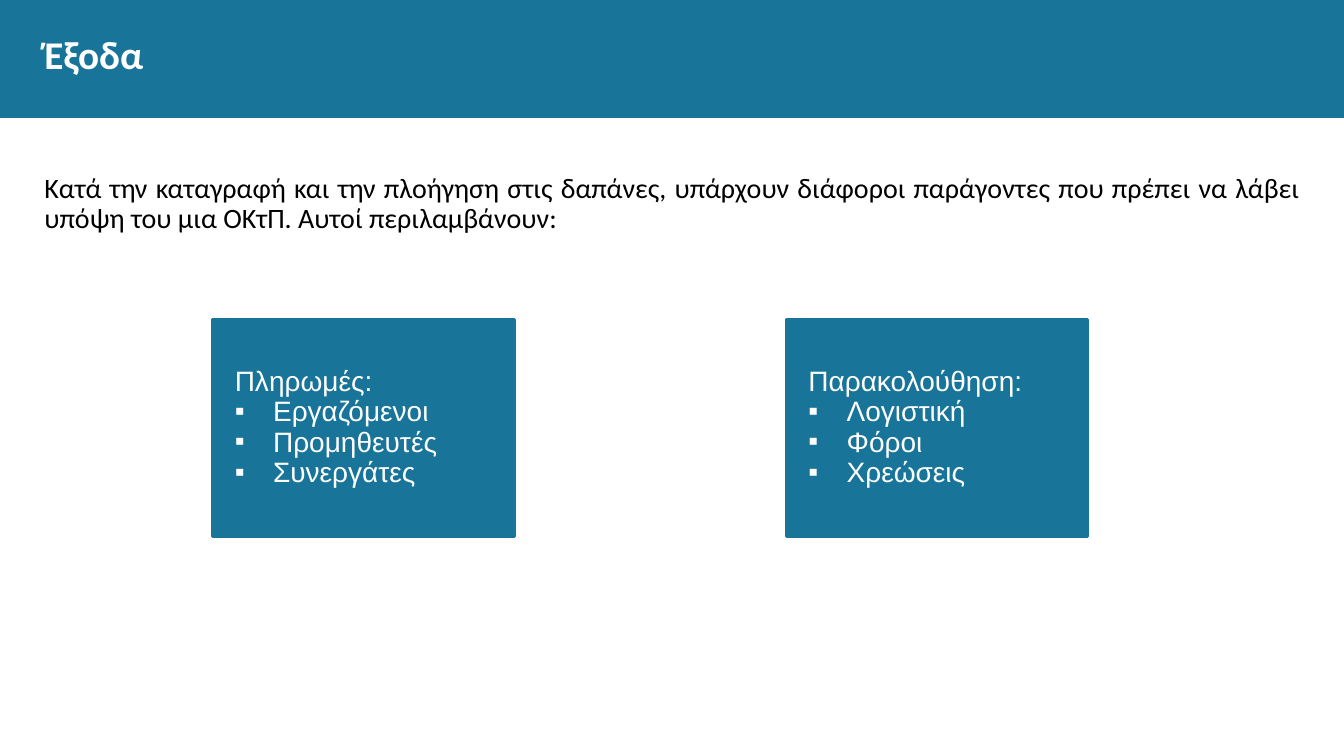
from lxml.etree import SubElement
from pptx import Presentation
from pptx.dml.color import RGBColor
from pptx.enum.shapes import MSO_SHAPE
from pptx.enum.text import MSO_ANCHOR, MSO_AUTO_SIZE, PP_ALIGN
from pptx.oxml.ns import qn
from pptx.util import Inches, Pt

BLUE, WHITE, BLACK = "187498", "FFFFFF", "000000"
MARGIN, CONTENT_WIDTH = 3.3, 93.47
CARD_LEFT, CARD_STEP = 15.83, 42.68
CARDS = [
    ("Πληρωμές:", ["Εργαζόμενοι", "Προμηθευτές", "Συνεργάτες"]),
    ("Παρακολούθηση:", ["Λογιστική", "Φόροι", "Χρεώσεις"]),
]


def color(value):
    return RGBColor.from_string(value)


class SlideBuilder:
    """Draws on one slide; every box is left, top, width, height in percent of the slide."""

    def __init__(self, presentation):
        self.width = presentation.slide_width
        self.height = presentation.slide_height
        self.slide = presentation.slides.add_slide(presentation.slide_layouts[5])

    def place(self, box):
        sides = (self.width, self.height, self.width, self.height)
        return [round(side * share / 100) for side, share in zip(sides, box)]

    def style(self, paragraph, size, font_name, font_color, align, bold=False):
        paragraph.alignment = align
        paragraph.line_spacing = 0.9
        font = paragraph.font
        font.size, font.name, font.bold = Pt(size), font_name, bold
        font.color.rgb = color(font_color)

    def frame(self, shape, anchor, inset=None):
        frame = shape.text_frame
        frame.word_wrap = True
        frame.auto_size = MSO_AUTO_SIZE.NONE
        frame.vertical_anchor = anchor
        if inset is not None:
            frame.margin_left = frame.margin_right = inset
            frame.margin_top = frame.margin_bottom = inset
        return frame

    def rectangle(self, box):
        shape = self.slide.shapes.add_shape(MSO_SHAPE.RECTANGLE, *self.place(box))
        shape.shadow.inherit = False
        shape.fill.solid()
        shape.fill.fore_color.rgb = color(BLUE)
        return shape

    def title(self, text, box):
        title = self.slide.shapes.title
        title.left, title.top, title.width, title.height = self.place(box)
        frame = self.frame(title, MSO_ANCHOR.MIDDLE, 0)
        frame.text = text
        self.style(frame.paragraphs[0], 28, "Calibri", WHITE, PP_ALIGN.LEFT, True)

    def title_band(self, box):
        """Adds the band behind the title."""
        band = self.rectangle(box)
        band.line.fill.background()
        self.slide.shapes.title.element.addprevious(band.element)

    def body(self, text, box):
        text_box = self.slide.shapes.add_textbox(*self.place(box))
        frame = self.frame(text_box, MSO_ANCHOR.TOP, 0)
        frame.text = text
        self.style(frame.paragraphs[0], 20, "Calibri", BLACK, PP_ALIGN.JUSTIFY)

    def indent(self, paragraph, left, first_line=0):
        properties = paragraph._p.get_or_add_pPr()
        properties.set("marL", str(Inches(left)))
        properties.set("indent", str(Inches(first_line)))
        return properties

    def bullet(self, paragraph):
        properties = self.indent(paragraph, 0.5, -0.38)
        bullet_color = SubElement(properties, qn("a:buClr"))
        SubElement(bullet_color, qn("a:srgbClr"), val=WHITE)
        SubElement(properties, qn("a:buFont"), typeface="Arial")
        SubElement(properties, qn("a:buChar"), char="▪")
        # The schema wants the default run properties after the bullet.
        properties.append(properties.find(qn("a:defRPr")))

    def card(self, heading, items, box):
        shape = self.rectangle(box)
        shape.line.color.rgb = color(BLUE)
        shape.line.width = Pt(2)
        frame = self.frame(shape, MSO_ANCHOR.MIDDLE)
        frame.text = "\n".join([heading, *items])
        for paragraph in frame.paragraphs:
            self.style(paragraph, 20, "Arial", WHITE, PP_ALIGN.JUSTIFY)
        heading_paragraph, *item_paragraphs = frame.paragraphs
        self.indent(heading_paragraph, 0.12)
        for paragraph in item_paragraphs:
            self.bullet(paragraph)


def main():
    presentation = Presentation()
    presentation.slide_width = Inches(13.33)
    presentation.slide_height = Inches(7.5)
    builder = SlideBuilder(presentation)
    builder.title_band((0, 0, 100, 15.6))
    builder.title("Έξοδα", (MARGIN, 2.53, CONTENT_WIDTH, 9.87))
    builder.body(
        "Κατά την καταγραφή και την πλοήγηση στις δαπάνες, υπάρχουν διάφοροι "
        "παράγοντες που πρέπει να λάβει υπόψη του μια ΟΚτΠ. Αυτοί περιλαμβάνουν:",
        (MARGIN, 23.07, CONTENT_WIDTH, 71.07),
    )
    for column, (heading, items) in enumerate(CARDS):
        left = CARD_LEFT + column * CARD_STEP
        builder.card(heading, items, (left, 42.27, 22.43, 28.67))
    presentation.save("out.pptx")


if __name__ == "__main__":
    main()
